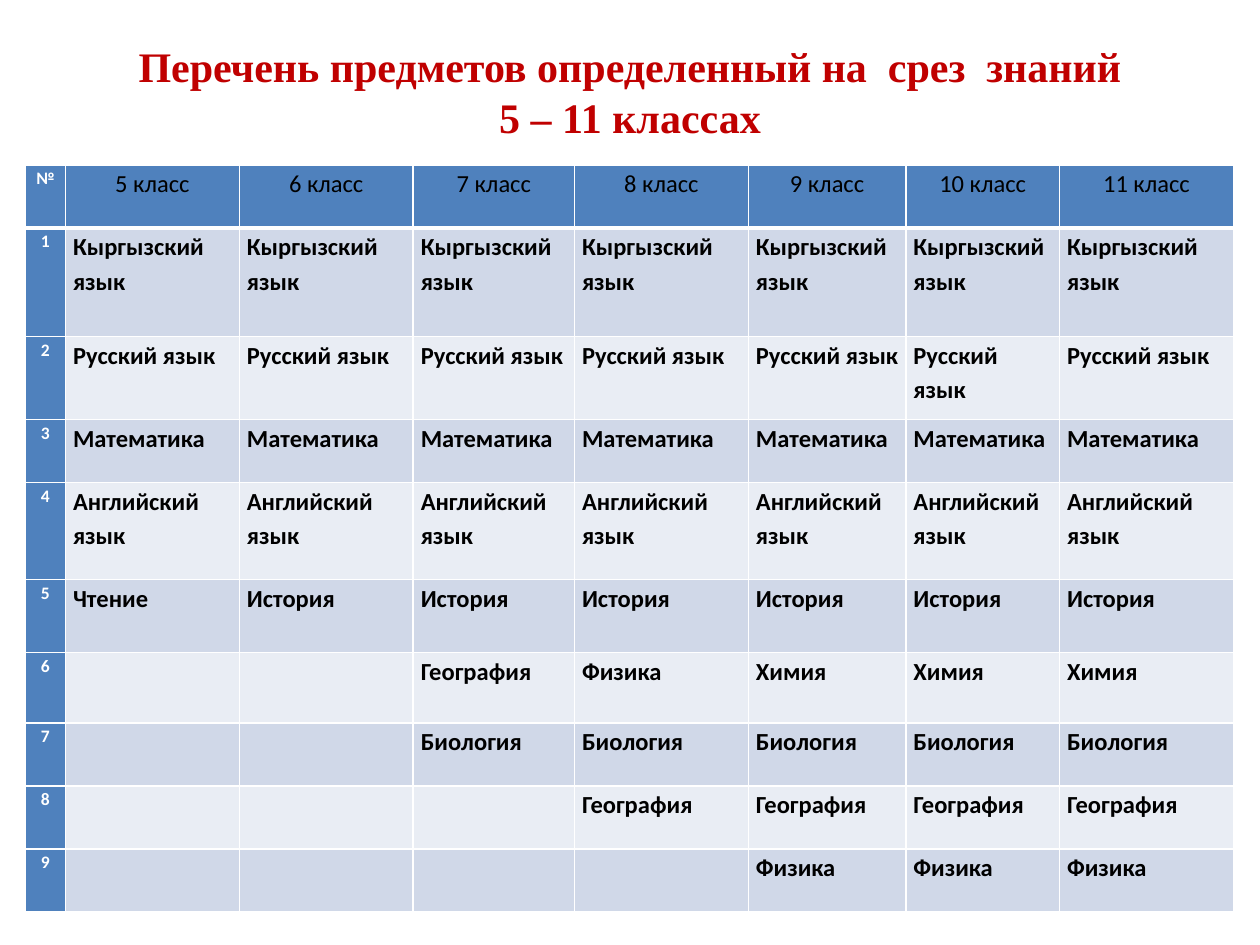
from dataclasses import dataclass

from lxml import etree
from pptx import Presentation
from pptx.dml.color import RGBColor
from pptx.enum.text import MSO_ANCHOR, PP_ALIGN
from pptx.oxml.ns import qn
from pptx.util import Inches, Pt

CENTER = PP_ALIGN.CENTER
LEFT = PP_ALIGN.LEFT
MIDDLE = MSO_ANCHOR.MIDDLE
TOP = MSO_ANCHOR.TOP
BLANK_LAYOUT = 6


@dataclass(frozen=True)
class Theme:
    title_font: str = "Times New Roman"
    table_font: str = "Calibri"
    title_size: int = 24
    number_size: int = 10
    body_size: int = 14
    title_color: str = "C00000"
    header_fill: str = "4F81BD"
    band_fills: tuple = ("D0D8E8", "E9EDF4")
    white: str = "FFFFFF"
    black: str = "000000"
    thin_border: int = 1
    thick_border: int = 3


TITLE_LINES = ["Перечень предметов определенный на  срез  знаний", "5 – 11 классах"]
GRADES = range(5, 12)
COLUMN_WIDTHS = [0.32, 1.38, 1.38, 1.28, 1.38, 1.25, 1.22, 1.38]
ROW_HEIGHTS = [0.5, 0.86, 0.66, 0.5, 0.77, 0.58, 0.56, 0.5, 0.5, 0.5]

# Subjects of each row, ending at the last grade; earlier grades stay empty.
SUBJECT_ROWS = [
    ["Кыргызский язык"] * 7,
    ["Русский язык"] * 7,
    ["Математика"] * 7,
    ["Английский язык"] * 7,
    ["Чтение"] + ["История"] * 6,
    ["География", "Физика"] + ["Химия"] * 3,
    ["Биология"] * 5,
    ["География"] * 4,
    ["Физика"] * 3,
]


class SlideBuilder:
    def __init__(self, slide, theme):
        self.slide = slide
        self.theme = theme

    def add_run(self, paragraph, text, font, size, color, bold=True):
        run = paragraph.add_run()
        run.text = text
        run.font.name = font
        run.font.size = Pt(size)
        run.font.bold = bold
        run.font.color.rgb = RGBColor.from_string(color)

    def add_title(self, lines, left, top, width, height):
        theme = self.theme
        box = self.slide.shapes.add_textbox(
            Inches(left), Inches(top), Inches(width), Inches(height))
        frame = box.text_frame
        frame.word_wrap = True
        frame.vertical_anchor = MIDDLE
        frame.margin_bottom = Inches(0.45)
        paragraph = frame.paragraphs[0]
        paragraph.alignment = CENTER
        for index, line in enumerate(lines):
            if index:
                paragraph.add_line_break()
            self.add_run(paragraph, line, theme.title_font, theme.title_size,
                         theme.title_color)

    def set_borders(self, cell, widths):
        """Draw white borders; widths maps L, R, T and B, in that order, to points."""
        properties = cell._tc.get_or_add_tcPr()
        for side, width in widths.items():
            line = etree.SubElement(properties, qn(f"a:ln{side}"), w=str(Pt(width)))
            fill = etree.SubElement(line, qn("a:solidFill"))
            etree.SubElement(fill, qn("a:srgbClr"), val=self.theme.white)

    def style_cell(self, cell, row, column):
        theme = self.theme
        thin, thick = theme.thin_border, theme.thick_border
        cell.margin_left = cell.margin_right = Inches(0.06)
        cell.margin_top = cell.margin_bottom = 0
        cell.vertical_anchor = TOP
        self.set_borders(cell, {
            "L": thin,
            "R": thin,
            "T": thick if row == 1 else thin,
            "B": thick if row == 0 else thin,
        })
        is_header = row == 0 or column == 0
        color = theme.header_fill if is_header else theme.band_fills[(row - 1) % 2]
        cell.fill.solid()
        cell.fill.fore_color.rgb = RGBColor.from_string(color)

    def fill_cell(self, cell, text, row, column):
        theme = self.theme
        paragraph = cell.text_frame.paragraphs[0]
        paragraph.alignment = CENTER if row == 0 or column == 0 else LEFT
        paragraph.line_spacing = 1.15
        if column == 0:
            size, color = theme.number_size, theme.white
        else:
            size, color = theme.body_size, theme.black
        self.add_run(paragraph, text, theme.table_font, size, color,
                     bold=row > 0 or column == 0)

    def add_table(self, rows, left, top, column_widths, row_heights):
        frame = self.slide.shapes.add_table(
            len(rows), len(column_widths), Inches(left), Inches(top),
            Inches(sum(column_widths)), Inches(sum(row_heights)))
        table = frame.table
        table.horz_banding = False
        for column, width in zip(table.columns, column_widths):
            column.width = Inches(width)
        for row, height in zip(table.rows, row_heights):
            row.height = Inches(height)
        for row, texts in enumerate(rows):
            for column, text in enumerate(texts):
                cell = table.cell(row, column)
                self.style_cell(cell, row, column)
                if text:
                    self.fill_cell(cell, text, row, column)


def build_table_rows():
    rows = [["№"] + [f"{grade} класс" for grade in GRADES]]
    for number, subjects in enumerate(SUBJECT_ROWS, start=1):
        empty = [""] * (len(GRADES) - len(subjects))
        rows.append([str(number)] + empty + subjects)
    return rows


def main():
    presentation = Presentation()
    presentation.slide_width = Inches(10)
    presentation.slide_height = Inches(7.5)
    slide = presentation.slides.add_slide(presentation.slide_layouts[BLANK_LAYOUT])
    builder = SlideBuilder(slide, Theme())
    builder.add_title(TITLE_LINES, 0.5, 0.3, 9, 1.25)
    builder.add_table(build_table_rows(), 0.2, 1.31, COLUMN_WIDTHS, ROW_HEIGHTS)
    presentation.save("out.pptx")


if __name__ == "__main__":
    main()
